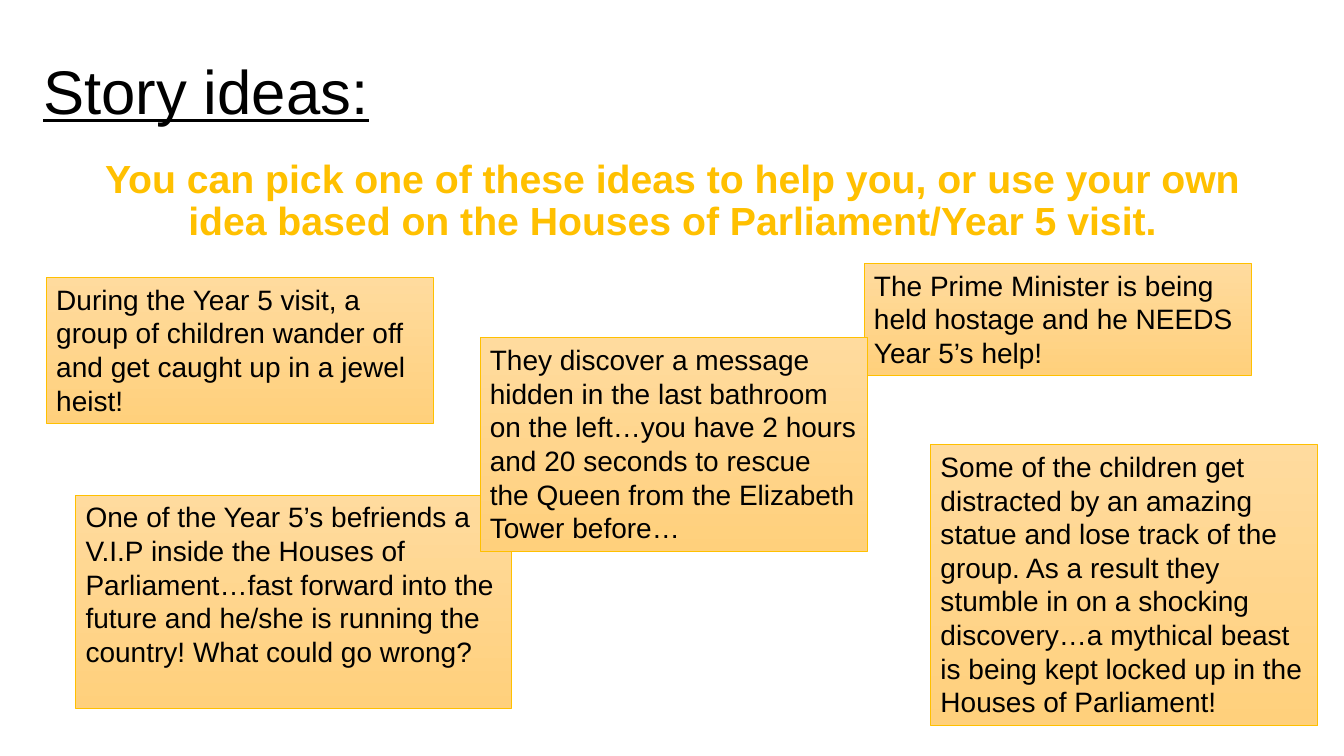
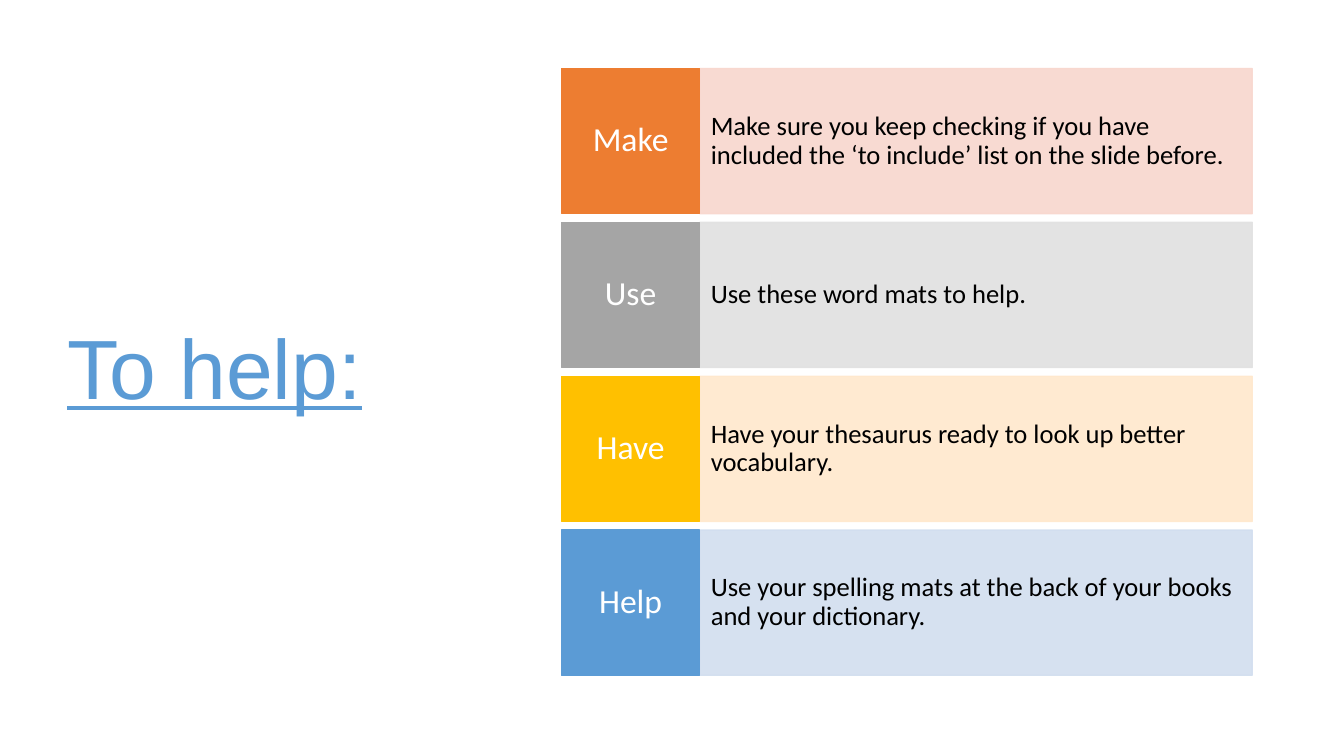
from lxml import etree
from pptx import Presentation
from pptx.dml.color import RGBColor
from pptx.enum.shapes import MSO_SHAPE
from pptx.enum.text import MSO_ANCHOR, PP_ALIGN
from pptx.oxml.ns import qn
from pptx.util import Inches, Pt

RECTANGLE = MSO_SHAPE.RECTANGLE
TOP, MIDDLE = MSO_ANCHOR.TOP, MSO_ANCHOR.MIDDLE
LEFT, CENTER = PP_ALIGN.LEFT, PP_ALIGN.CENTER

BLACK, WHITE = "000000", "FFFFFF"
GOLD, BLUE = "FFC000", "5B9BD5"
CARD_TOP, CARD_BOTTOM = "FFDB9E", "FFD07C"
HEADING_FONT, TABLE_FONT = "Arial", "Calibri"

STORY_CARDS = [
    (0.46, 2.75, 3.84, 1.45, "During the Year 5 visit, a group of children wander off and get caught up in a jewel heist!"),
    (9.23, 4.41, 3.84, 2.79, "Some of the children get distracted by an amazing statue and lose track of the group. "
     "As a result they stumble in on a shocking discovery…a mythical beast is being kept locked up "
     "in the Houses of Parliament!"),
    (0.75, 4.91, 4.32, 2.12, "One of the Year 5’s befriends a V.I.P inside the Houses of Parliament…fast forward "
     "into the future and he/she is running the country! What could go wrong?"),
    (8.57, 2.61, 3.84, 1.11, "The Prime Minister is being held hostage and he NEEDS Year 5’s help!"),
    (4.76, 3.35, 3.84, 2.12, "They discover a message hidden in the last bathroom on the left…you have 2 hours "
     "and 20 seconds to rescue the Queen from the Elizabeth Tower before…"),
]

HELP_ROWS = [
    ("Make", "Make sure you keep checking if you have included the ‘to include’ list on the slide before.",
     "ED7D31", "F8D7CE"),
    ("Use", "Use these word mats to help.", "A5A5A5", "E1E1E1"),
    ("Have", "Have your thesaurus ready to look up better vocabulary.", GOLD, "FFE8CC"),
    ("Help", "Use your spelling mats at the back of your books and your dictionary.", BLUE, "D2DEEF"),
]
ROWS_TOP, ROWS_BOTTOM, ROW_HEIGHT = 0.68, 6.7, 1.44
LABEL_LEFT, LABEL_WIDTH, PANEL_WIDTH = 5.57, 1.37, 5.48


def colour(hex_value):
    return RGBColor.from_string(hex_value)


def set_opacity(shape, percent):
    for colour_element in shape._element.spPr.iter(qn("a:srgbClr")):
        etree.SubElement(colour_element, qn("a:alpha"), val=str(percent * 1000))


class Deck:
    def __init__(self):
        self.deck = Presentation()
        self.deck.slide_width = Inches(13.33)
        self.deck.slide_height = Inches(7.5)
        self.page = None

    def new_page(self):
        self.page = self.deck.slides.add_slide(self.deck.slide_layouts[6])

    def fill_text(self, shape, text, size, font, text_colour, anchor=TOP, align=LEFT,
                  spacing=0.9, margins=(0.1, 0.05)):
        frame = shape.text_frame
        frame.word_wrap = True
        frame.vertical_anchor = anchor
        frame.margin_left = frame.margin_right = Inches(margins[0])
        frame.margin_top = frame.margin_bottom = Inches(margins[1])
        para = frame.paragraphs[0]
        para.text = text
        para.alignment = align
        para.line_spacing = spacing
        para.font.size = Pt(size)
        para.font.name = font
        para.font.color.rgb = colour(text_colour)
        return para

    def text(self, box, text, size, text_colour, **style):
        shape = self.page.shapes.add_textbox(*map(Inches, box))
        return self.fill_text(shape, text, size, HEADING_FONT, text_colour, **style)

    def title(self, box, text, size, text_colour):
        self.text(box, text, size, text_colour, anchor=MIDDLE).font.underline = True

    def rectangle(self, box, line_colour, line_width):
        shape = self.page.shapes.add_shape(RECTANGLE, *map(Inches, box))
        shape.shadow.inherit = False
        shape.line.color.rgb = colour(line_colour)
        shape.line.width = Pt(line_width)
        return shape

    def card(self, box, text):
        shape = self.rectangle(box, GOLD, 0.5)
        shape.fill.gradient()
        shape.fill.gradient_angle = 270
        for stop, stop_colour in zip(shape.fill.gradient_stops, (CARD_TOP, CARD_BOTTOM)):
            stop.color.rgb = colour(stop_colour)
        self.fill_text(shape, text, 20, HEADING_FONT, BLACK, spacing=1.0)

    def block(self, box, text, size, fill_colour, text_colour, align, margins, opacity=100):
        shape = self.rectangle(box, fill_colour, 1)
        shape.fill.solid()
        shape.fill.fore_color.rgb = colour(fill_colour)
        if opacity < 100:
            set_opacity(shape, opacity)
        self.fill_text(shape, text, size, TABLE_FONT, text_colour, anchor=MIDDLE,
                       align=align, margins=margins)

    def help_row(self, top, label, advice, label_colour, panel_colour):
        panel_box = (LABEL_LEFT + LABEL_WIDTH, top, PANEL_WIDTH, ROW_HEIGHT)
        label_box = (LABEL_LEFT, top, LABEL_WIDTH, ROW_HEIGHT)
        self.block(panel_box, advice, 19, panel_colour, BLACK, LEFT, (0.11, 0.37), opacity=90)
        self.block(label_box, label, 24, label_colour, WHITE, CENTER, (0.07, 0.14))


def story_page(deck):
    deck.new_page()
    deck.title((0.33, 0.21, 11.5, 1.45), "Story ideas:", 44, BLACK)
    prompt = deck.text(
        (0.92, 1.53, 11.5, 4.76),
        "You can pick one of these ideas to help you, or use your own idea based on "
        "the Houses of Parliament/Year 5 visit.",
        28, GOLD, align=CENTER)
    prompt.font.bold = True
    prompt.space_before = Pt(10)
    for *box, text in STORY_CARDS:
        deck.card(box, text)


def help_page(deck):
    deck.new_page()
    deck.title((0.57, 0.68, 4.16, 6.02), "To help:", 60, BLUE)
    step = (ROWS_BOTTOM - ROWS_TOP - ROW_HEIGHT) / (len(HELP_ROWS) - 1)
    for index, row in enumerate(HELP_ROWS):
        deck.help_row(ROWS_TOP + index * step, *row)


def main():
    deck = Deck()
    story_page(deck)
    help_page(deck)
    deck.deck.save("out.pptx")


if __name__ == "__main__":
    main()
